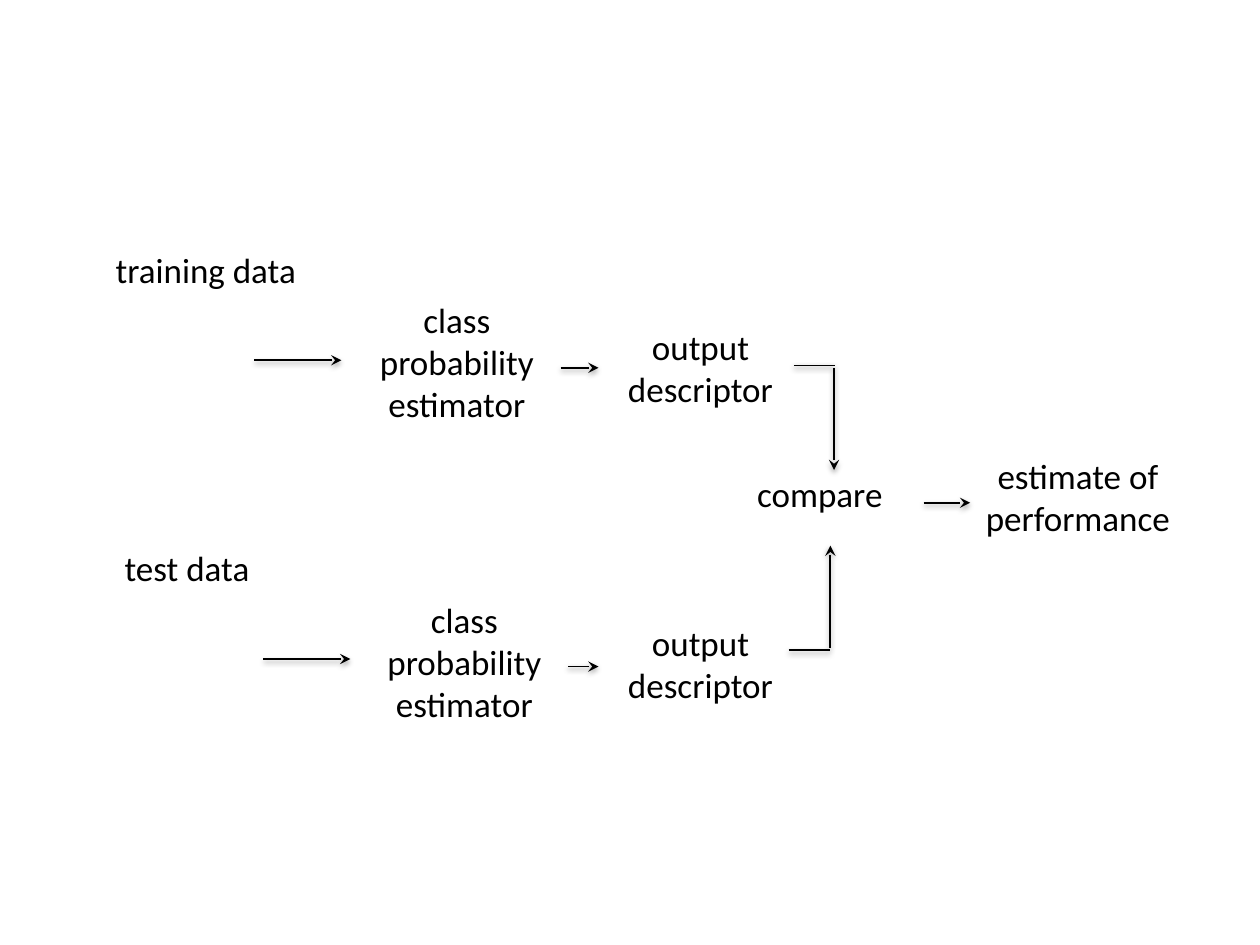
import dataclasses

import lxml.etree
import pptx
import pptx.dml.color
import pptx.enum.shapes
import pptx.enum.text
import pptx.oxml
import pptx.oxml.ns
import pptx.slide
import pptx.util

Pt = pptx.util.Pt


@dataclasses.dataclass(frozen=True)
class Theme:
    """Colours, type and line settings of the diagram, in points."""

    ink: pptx.dml.color.RGBColor = pptx.dml.color.RGBColor(0, 0, 0)
    font: str = "Calibri"
    size: float = 20
    line: float = 1
    shadow_blur: float = 3.1
    shadow_distance: float = 1.6
    shadow_percent: int = 38


@dataclasses.dataclass(frozen=True)
class Label:
    """A text block of the flow, in points."""

    text: str
    left: float
    top: float
    width: float
    centred: bool = True


@dataclasses.dataclass(frozen=True)
class Link:
    """A straight line of the flow, in points."""

    start: tuple[float, float]
    end: tuple[float, float]
    arrow: bool = True


THEME = Theme()
ESTIMATOR = "class\nprobability\nestimator"
OUTPUT = "output\ndescriptor"

LABELS = [
    Label("training data", 59, 138.2, 148.3, centred=False),
    Label(ESTIMATOR, 196.6, 167, 128.9),
    Label(OUTPUT, 339.1, 182.2, 122.4),
    Label("test data", 64.1, 308.9, 108.7, centred=False),
    Label(ESTIMATOR, 200.9, 338.4, 128.9),
    Label(OUTPUT, 339.1, 351.4, 122.4),
    Label("compare", 425.5, 266.4, 108.7, centred=False),
    Label("estimate of\nperformance", 540.7, 256.3, 150.5),
]

LINKS = [
    Link((145.4, 205.9), (195.1, 205.9)),
    Link((320.4, 210.2), (342, 210.2)),
    Link((150.5, 376.6), (200.2, 376.6)),
    Link((324.7, 380.9), (342, 380.9)),
    Link((476.6, 210.2), (476.6, 268.6)),
    Link((453.6, 208.8), (477.4, 208.8), arrow=False),
    Link((527.8, 287.3), (554.4, 287.3)),
    Link((474.5, 370.1), (474.5, 311.8)),
    Link((450.7, 371.5), (474.5, 371.5), arrow=False),
]


def add_label(page: pptx.slide.Slide, label: Label) -> None:
    """Write one text block, with its height set by its line count."""
    height = 8 + 27 * len(label.text.split("\n"))
    box = page.shapes.add_textbox(Pt(label.left), Pt(label.top), Pt(label.width), Pt(height))
    frame = box.text_frame
    frame.word_wrap = True
    frame.text = label.text
    align = pptx.enum.text.PP_ALIGN
    for para in frame.paragraphs:
        para.alignment = align.CENTER if label.centred else align.LEFT
        for span in para.runs:
            span.font.name = THEME.font
            span.font.size = Pt(THEME.size)
            span.font.color.rgb = THEME.ink


def add_link(page: pptx.slide.Slide, link: Link) -> None:
    """Draw one line with its soft shadow and optional arrowhead."""
    straight = pptx.enum.shapes.MSO_CONNECTOR.STRAIGHT
    ends = [Pt(value) for value in (*link.start, *link.end)]
    connector = page.shapes.add_connector(straight, *ends)
    connector.line.width = Pt(THEME.line)
    connector.line.color.rgb = THEME.ink
    if link.arrow:
        outline = connector.line._get_or_add_ln()
        lxml.etree.SubElement(outline, pptx.oxml.ns.qn("a:tailEnd"), type="stealth")
    shadow = pptx.oxml.parse_xml(
        f'<a:effectLst {pptx.oxml.ns.nsdecls("a")}>'
        f'<a:outerShdw blurRad="{Pt(THEME.shadow_blur)}" dist="{Pt(THEME.shadow_distance)}"'
        f' dir="5400000" rotWithShape="0"><a:srgbClr val="{THEME.ink}">'
        f'<a:alpha val="{THEME.shadow_percent * 1000}"/></a:srgbClr></a:outerShdw></a:effectLst>'
    )
    connector._element.spPr.append(shadow)


def main() -> None:
    """Build the performance estimation flow and save it."""
    deck = pptx.Presentation()
    deck.slide_width, deck.slide_height = Pt(720), Pt(540)
    page = deck.slides.add_slide(deck.slide_layouts.get_by_name("Blank"))
    for label in LABELS:
        add_label(page, label)
    for link in LINKS:
        add_link(page, link)
    deck.save("out.pptx")


if __name__ == "__main__":
    main()
